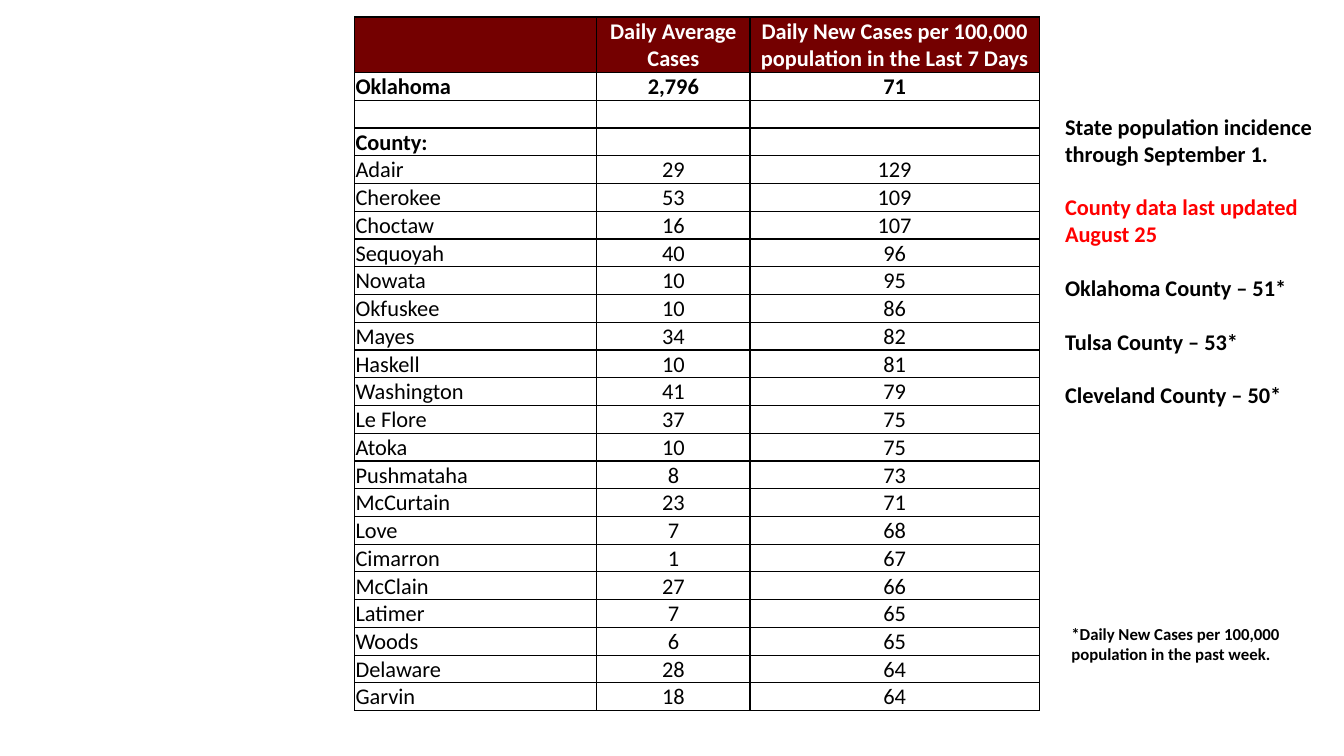
import pptx
import pptx.util
import pptx.dml.color
import pptx.enum.text
import pptx.oxml.ns
from lxml import etree

Cm, Pt = pptx.util.Cm, pptx.util.Pt
ALIGN = pptx.enum.text.PP_ALIGN

# Content
COLOURS = {"header": "740000", "white": "FFFFFF", "black": "000000", "alert": "FF0000"}
FONT = "Calibri"

HEADER = ("", "Daily Average Cases", "Daily New Cases per 100,000 population in the Last 7 Days")
STATE_ROWS = [("Oklahoma", "2,796", "71"), ("", "", ""), ("County:", "", "")]
COUNTY_ROWS = [
    ("Adair", "29", "129"),
    ("Cherokee", "53", "109"),
    ("Choctaw", "16", "107"),
    ("Sequoyah", "40", "96"),
    ("Nowata", "10", "95"),
    ("Okfuskee", "10", "86"),
    ("Mayes", "34", "82"),
    ("Haskell", "10", "81"),
    ("Washington", "41", "79"),
    ("Le Flore", "37", "75"),
    ("Atoka", "10", "75"),
    ("Pushmataha", "8", "73"),
    ("McCurtain", "23", "71"),
    ("Love", "7", "68"),
    ("Cimarron", "1", "67"),
    ("McClain", "27", "66"),
    ("Latimer", "7", "65"),
    ("Woods", "6", "65"),
    ("Delaware", "28", "64"),
    ("Garvin", "18", "64"),
]
SUMMARY = [
    ("State population incidence through September 1.", "black"),
    ("County data last updated August 25", "alert"),
    ("Oklahoma County – 51*", "black"),
    ("Tulsa County – 53*", "black"),
    ("Cleveland County – 50*", "black"),
]
FOOTNOTE = [("*Daily New Cases per 100,000 population in the past week.", "black")]

# Layout in centimetres
COLUMN_WIDTHS = (6.1, 3.86, 7.29)
HEADER_HEIGHT, ROW_HEIGHT = 1.4, 0.7
TABLE_LEFT, TABLE_TOP = 8.94, 0.43


def write(paragraph, text, size=16, bold=True, colour="black", align=ALIGN.LEFT, before=0):
    paragraph.alignment = align
    paragraph.space_before = Pt(before)
    if not text:
        # An empty cell still needs its text size to keep the row height
        paragraph._p.get_or_add_endParaRPr().set("sz", str(size * 100))
        return
    run = paragraph.add_run()
    run.text = text
    run.font.name = FONT
    run.font.size = Pt(size)
    run.font.bold = bold
    run.font.color.rgb = pptx.dml.color.RGBColor.from_string(COLOURS[colour])


def add_borders(cell):
    properties = cell._tc.get_or_add_tcPr()
    for side in ("lnL", "lnR", "lnT", "lnB"):
        line = etree.SubElement(properties, pptx.oxml.ns.qn(f"a:{side}"), w=str(Pt(1)))
        fill = etree.SubElement(line, pptx.oxml.ns.qn("a:solidFill"))
        etree.SubElement(fill, pptx.oxml.ns.qn("a:srgbClr"), val=COLOURS["black"])


def add_note(slide, left, top, width, height, lines, size, gap=0):
    box = slide.shapes.add_textbox(Cm(left), Cm(top), Cm(width), Cm(height))
    frame = box.text_frame
    frame.word_wrap = True
    for index, (text, colour) in enumerate(lines):
        paragraph = frame.add_paragraph() if index else frame.paragraphs[0]
        write(paragraph, text, size=size, colour=colour, before=gap if index else 0)


def add_case_table(slide):
    rows = [HEADER] + STATE_ROWS + COUNTY_ROWS
    height = HEADER_HEIGHT + ROW_HEIGHT * (len(rows) - 1)
    frame = slide.shapes.add_table(len(rows), len(HEADER), Cm(TABLE_LEFT), Cm(TABLE_TOP),
                                   Cm(sum(COLUMN_WIDTHS)), Cm(height))
    table = frame.table
    table.first_row = table.horz_banding = False
    for column, width in zip(table.columns, COLUMN_WIDTHS):
        column.width = Cm(width)

    for row_index, values in enumerate(rows):
        is_header = row_index == 0
        table.rows[row_index].height = Cm(HEADER_HEIGHT if is_header else ROW_HEIGHT)
        for column_index, text in enumerate(values):
            cell = table.cell(row_index, column_index)
            cell.margin_left = cell.margin_right = cell.margin_top = Cm(0.02)
            cell.margin_bottom = 0
            cell.vertical_anchor = pptx.enum.text.MSO_ANCHOR.BOTTOM
            add_borders(cell)
            if is_header:
                cell.fill.solid()
                cell.fill.fore_color.rgb = pptx.dml.color.RGBColor.from_string(COLOURS["header"])
            else:
                cell.fill.background()
            write(cell.text_frame.paragraphs[0], text,
                  bold=row_index <= len(STATE_ROWS),
                  colour="white" if is_header else "black",
                  align=ALIGN.CENTER if column_index else ALIGN.LEFT)


def main():
    presentation = pptx.Presentation()
    presentation.slide_width, presentation.slide_height = Cm(33.87), Cm(19.05)
    slide = presentation.slides.add_slide(presentation.slide_layouts[6])

    # State summary, case table and footnote
    add_note(slide, 26.59, 2.72, 7.26, 7.77, SUMMARY, size=16, gap=19.2)
    add_case_table(slide)
    add_note(slide, 26.75, 15.6, 6.05, 1.27, FOOTNOTE, size=12)

    presentation.save("out.pptx")


if __name__ == "__main__":
    main()
